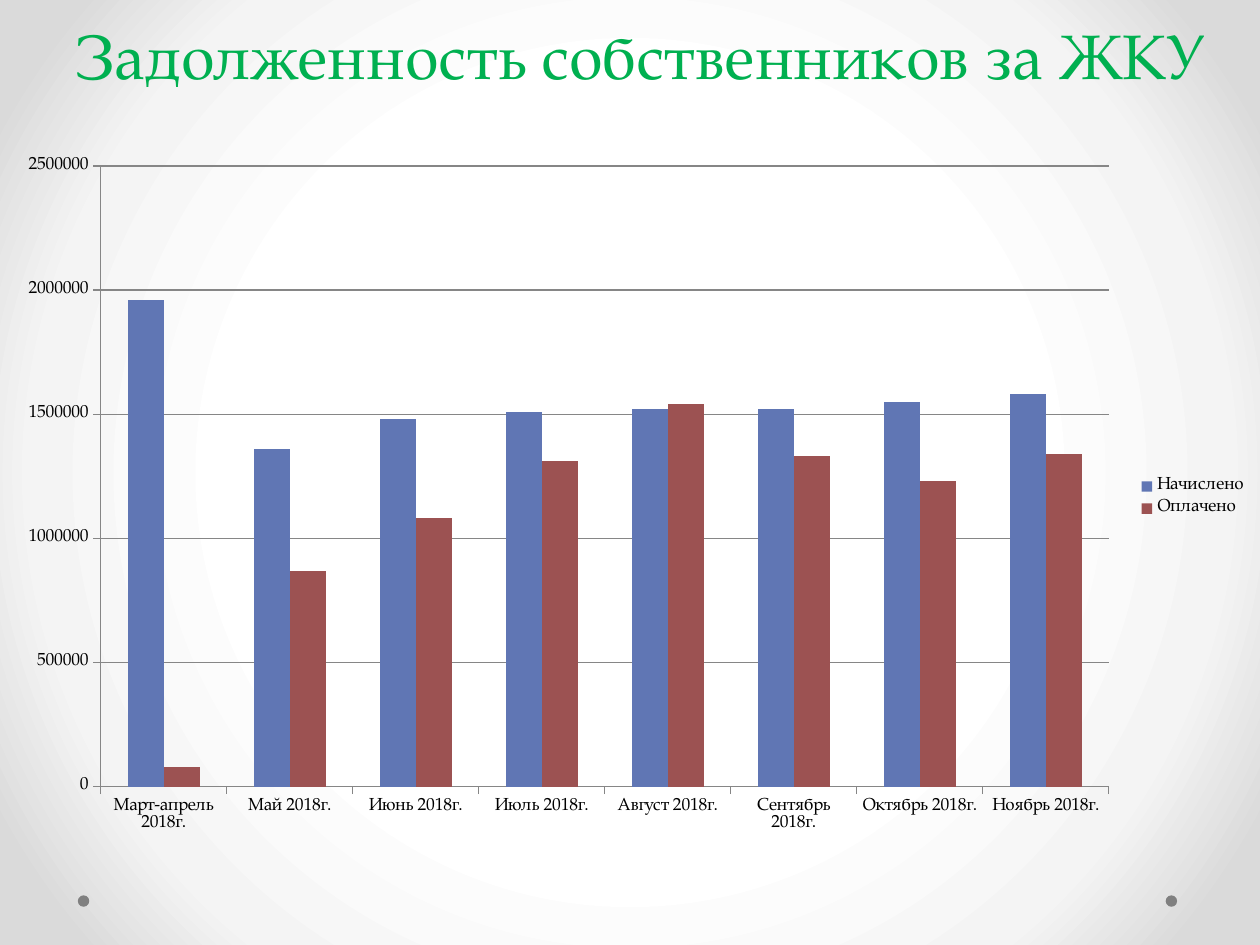
from lxml import etree
from pptx import Presentation
from pptx.chart.data import CategoryChartData
from pptx.dml.color import RGBColor
from pptx.enum.chart import XL_CHART_TYPE, XL_LEGEND_POSITION, XL_TICK_MARK
from pptx.enum.shapes import MSO_SHAPE
from pptx.enum.text import MSO_ANCHOR, PP_ALIGN
from pptx.oxml import parse_xml
from pptx.oxml.ns import nsdecls, qn
from pptx.util import Cm, Pt

CLUSTERED = XL_CHART_TYPE.COLUMN_CLUSTERED
RIGHT = XL_LEGEND_POSITION.RIGHT
OUTSIDE = XL_TICK_MARK.OUTSIDE
ELLIPSE = MSO_SHAPE.OVAL
BOTTOM = MSO_ANCHOR.BOTTOM
CENTER = PP_ALIGN.CENTER

# Content
FONT = "TeX Gyre Pagella"
TITLE = "Задолженность собственников за ЖКУ"
MONTHS = ["Март-апрель", "Май", "Июнь", "Июль", "Август", "Сентябрь", "Октябрь", "Ноябрь"]
SERIES = [
    ("Начислено", "6076B4",
     [1960000, 1360000, 1480000, 1510000, 1520000, 1520000, 1550000, 1580000]),
    ("Оплачено", "9C5252",
     [80000, 870000, 1080000, 1310000, 1540000, 1330000, 1230000, 1340000]),
]
BACKGROUND_STOPS = [(50, "FFFFFF"), (76, "F4F4F4"), (92, "DADADA")]
DOT_LEFTS = [1.57, 23.5]
PLOT_LAYOUT = {"x": 0.08, "y": 0.03, "w": 0.8, "h": 0.88}
LINE_COLOR = "868686"


def color(value):
    return RGBColor.from_string(value)


def set_background(slide):
    slide.background.fill.solid()
    solid = next(slide.element.iter(qn("a:solidFill")))
    stops = "".join(
        f'<a:gs pos="{position * 1000}"><a:srgbClr val="{value}"/></a:gs>'
        for position, value in BACKGROUND_STOPS)
    gradient = parse_xml(
        f'<a:gradFill {nsdecls("a")} rotWithShape="1"><a:gsLst>{stops}</a:gsLst>'
        '<a:path path="circle"><a:fillToRect l="50000" t="50000" r="50000" b="50000"/>'
        '</a:path></a:gradFill>')
    solid.getparent().replace(solid, gradient)


def add_dots(slide):
    for left in DOT_LEFTS:
        dot = slide.shapes.add_shape(ELLIPSE, Cm(left), Cm(18.05), Cm(0.23), Cm(0.23))
        dot.shadow.inherit = False
        dot.fill.solid()
        dot.fill.fore_color.rgb = color("808080")
        dot.line.fill.background()


def add_title(slide):
    box = slide.shapes.add_textbox(Cm(0.89), Cm(-2.46), Cm(24.03), Cm(4.44))
    frame = box.text_frame
    frame.word_wrap = True
    frame.vertical_anchor = BOTTOM
    paragraph = frame.paragraphs[0]
    paragraph.alignment = CENTER
    paragraph.line_spacing = Pt(58)
    run = paragraph.add_run()
    run.text = TITLE
    run.font.name = FONT
    run.font.size = Pt(36)
    run.font.color.rgb = color("00B050")


def fix_plot_position(chart):
    plot_area = next(chart.element.iter(qn("c:plotArea")))
    for old in plot_area.findall(qn("c:layout")):
        plot_area.remove(old)
    layout = etree.Element(qn("c:layout"))
    manual = etree.SubElement(layout, qn("c:manualLayout"))
    settings = {"layoutTarget": "inner", "xMode": "edge", "yMode": "edge", **PLOT_LAYOUT}
    for name, value in settings.items():
        etree.SubElement(manual, qn(f"c:{name}")).set("val", str(value))
    plot_area.insert(0, layout)


def add_debt_chart(slide):
    data = CategoryChartData()
    data.categories = [f"{month} 2018г." for month in MONTHS]
    for name, _, values in SERIES:
        data.add_series(name, values)
    chart = slide.shapes.add_chart(
        CLUSTERED, Cm(0), Cm(2.92), Cm(25.4), Cm(14.22), data).chart
    chart.has_title = False
    chart.font.name = FONT
    chart.font.size = Pt(10)
    chart.font.color.rgb = color("000000")

    # Columns
    plot = chart.plots[0]
    plot.gap_width = 150
    plot.overlap = 0
    plot.vary_by_categories = False
    for series, (_, fill_color, _) in zip(plot.series, SERIES):
        series.format.fill.solid()
        series.format.fill.fore_color.rgb = color(fill_color)

    # Axes, gridlines and legend
    value_axis = chart.value_axis
    value_axis.minimum_scale = 0
    value_axis.maximum_scale = 2500000
    value_axis.major_unit = 500000
    value_axis.has_major_gridlines = True
    for axis in (chart.category_axis, value_axis):
        axis.major_tick_mark = OUTSIDE
    for part in (chart.category_axis, value_axis, value_axis.major_gridlines):
        part.format.line.color.rgb = color(LINE_COLOR)
        part.format.line.width = Pt(0.75)
    chart.has_legend = True
    chart.legend.position = RIGHT
    chart.legend.include_in_layout = False
    fix_plot_position(chart)


def main():
    presentation = Presentation()
    presentation.slide_width = Cm(25.4)
    presentation.slide_height = Cm(19.05)
    slide = presentation.slides.add_slide(presentation.slide_layouts[6])
    set_background(slide)
    add_dots(slide)
    add_title(slide)
    add_debt_chart(slide)
    presentation.save("out.pptx")


if __name__ == "__main__":
    main()
